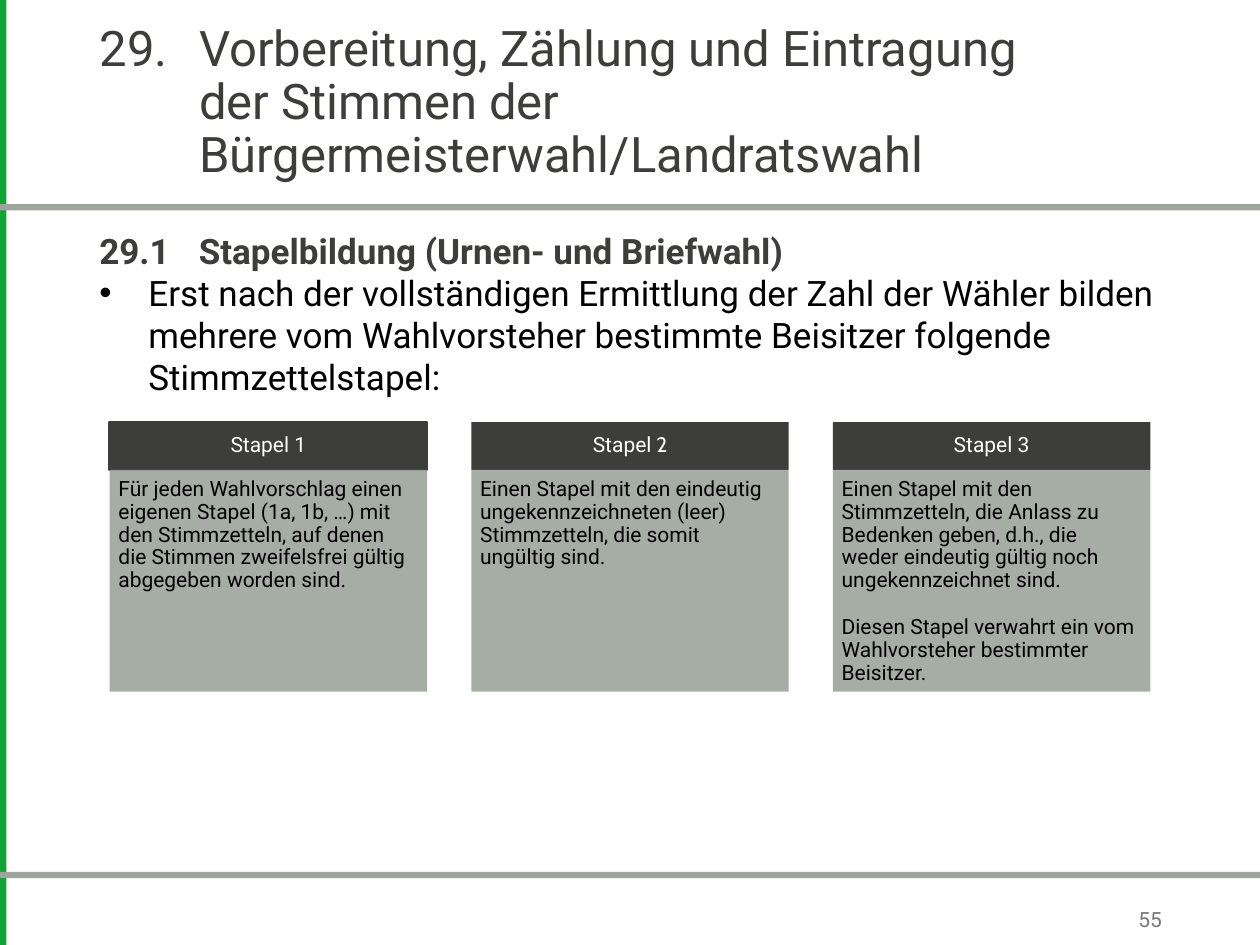
from dataclasses import dataclass

from lxml import etree
from pptx import Presentation
from pptx.dml.color import RGBColor
from pptx.enum.shapes import MSO_SHAPE
from pptx.enum.text import MSO_ANCHOR, MSO_AUTO_SIZE, PP_ALIGN
from pptx.oxml.ns import qn
from pptx.util import Inches, Pt

RECTANGLE = MSO_SHAPE.RECTANGLE
TOP, MIDDLE = MSO_ANCHOR.TOP, MSO_ANCHOR.MIDDLE
LEFT, CENTER, RIGHT = PP_ALIGN.LEFT, PP_ALIGN.CENTER, PP_ALIGN.RIGHT
TITLE_ONLY = 5


@dataclass(frozen=True)
class Theme:
    font: str = "Roboto"
    alt_font: str = "Cabin"
    green: str = "14A136"
    sage: str = "9DA59C"
    dark: str = "3D3E3C"
    black: str = "000000"
    white: str = "FFFFFF"
    grey: str = "797979"
    title_size: int = 28
    body_size: int = 20
    small_size: int = 12


THEME = Theme()

TITLE = "29. \tVorbereitung, Zählung und Eintragung der Stimmen der Bürgermeisterwahl/Landratswahl"
HEADING = "29.1 \tStapelbildung (Urnen- und Briefwahl)"
INTRO = ("Erst nach der vollständigen Ermittlung der Zahl der Wähler bilden mehrere vom "
         "Wahlvorsteher bestimmte Beisitzer folgende Stimmzettelstapel:")
# Each stack: header runs with their fonts, body paragraphs, header outline width
STACKS = [
    ([("Stapel 1", THEME.font)],
     ["Für jeden Wahlvorschlag einen eigenen Stapel (1a, 1b, …) mit den Stimmzetteln, "
      "auf denen die Stimmen zweifelsfrei gültig abgegeben worden sind."], 1.5),
    ([("Stapel", THEME.font), (" 2", THEME.alt_font)],
     ["Einen Stapel mit den eindeutig ungekennzeichneten (leer) Stimmzetteln, "
      "die somit ungültig sind."], 0),
    ([("Stapel 3", THEME.font)],
     ["Einen Stapel mit den Stimmzetteln, die Anlass zu Bedenken geben, d.h., die weder "
      "eindeutig gültig noch ungekennzeichnet sind.",
      "Diesen Stapel verwahrt ein vom Wahlvorsteher bestimmter Beisitzer."], 0),
]


def apply(target, values):
    for name, value in values.items():
        setattr(target, name, value)


def lengths(box):
    return [Inches(value) for value in box]


def add_bar(page, box, color, alpha=None, outline=0):
    bar = page.shapes.add_shape(RECTANGLE, *lengths(box))
    bar.shadow.inherit = False
    bar.fill.solid()
    bar.fill.fore_color.rgb = RGBColor.from_string(color)
    if alpha:
        fill_color = bar.fill._xPr.find(qn("a:solidFill"))[0]
        etree.SubElement(fill_color, qn("a:alpha")).set("val", str(alpha * 1000))
    if outline:
        bar.line.color.rgb = RGBColor.from_string(color)
        bar.line.width = Pt(outline)
    else:
        bar.line.fill.background()
    return bar


def set_frame(frame, anchor, insets=(0.1, 0.05, 0.1, 0.05)):
    sides = ("margin_left", "margin_top", "margin_right", "margin_bottom")
    apply(frame, dict(zip(sides, lengths(insets))))
    apply(frame, {"word_wrap": True, "auto_size": MSO_AUTO_SIZE.NONE,
                  "vertical_anchor": anchor})


def write(para, spans, size, color, bold=False, hanging=0, bullet=None, **layout):
    """Fill a paragraph with (text, font) spans; hanging is the indent in inches."""
    properties = para._p.get_or_add_pPr()
    if hanging:
        properties.set("marL", str(Inches(hanging)))
        properties.set("indent", str(-Inches(hanging)))
    if bullet:
        etree.SubElement(properties, qn("a:buFont")).set("typeface", "Arial")
        etree.SubElement(properties, qn("a:buChar")).set("char", bullet)
    apply(para, {"alignment": LEFT, **layout})
    for text, font in spans:
        span = para.add_run()
        span.text = text
        apply(span.font, {"name": font, "size": Pt(size), "bold": bold})
        span.font.color.rgb = RGBColor.from_string(color)


def add_frame_lines(page):
    add_bar(page, (0, 0, 0.05, 7.5), THEME.green)
    for top in (1.62, 6.92):
        add_bar(page, (0, top, 10, 0.05), THEME.sage)


def place_title(page, box):
    title = page.shapes.title
    apply(title, dict(zip(("left", "top", "width", "height"), lengths(box))))
    set_frame(title.text_frame, MIDDLE)
    write(title.text_frame.paragraphs[0], [(TITLE, THEME.font)], THEME.title_size,
          THEME.dark, hanging=0.79, line_spacing=0.9)


def add_intro(page, box):
    frame = page.shapes.add_textbox(*lengths(box)).text_frame
    set_frame(frame, TOP)
    write(frame.paragraphs[0], [(HEADING, THEME.font)], THEME.body_size, THEME.dark,
          bold=True, hanging=0.79)
    write(frame.add_paragraph(), [(INTRO, THEME.font)], THEME.body_size, THEME.black,
          hanging=0.39, bullet="•")


def add_stack(page, box, header, body, outline):
    left, top, width, height = box
    header_height = 0.38
    head = add_bar(page, (left, top, width, header_height), THEME.dark, outline=outline)
    set_frame(head.text_frame, MIDDLE, (0.09, 0.05, 0.09, 0.05))
    write(head.text_frame.paragraphs[0], header, THEME.small_size, THEME.white,
          alignment=CENTER, line_spacing=0.9)

    panel_box = (left, top + header_height, width, height - header_height)
    frame = add_bar(page, panel_box, THEME.sage, alpha=90).text_frame
    set_frame(frame, TOP, (0.07, 0.07, 0.09, 0.1))
    for index, text in enumerate(body):
        para = frame.add_paragraph() if index else frame.paragraphs[0]
        write(para, [(text, THEME.font)], THEME.small_size, THEME.black,
              line_spacing=0.9, space_before=Pt(14 if index else 0))


def add_stacks(page, box):
    left, top, width, height = box
    stack_width = 2.52
    step = (width - stack_width) / (len(STACKS) - 1)
    for index, stack in enumerate(STACKS):
        add_stack(page, (left + index * step, top, stack_width, height), *stack)


def add_page_number(page, box):
    frame = page.shapes.add_textbox(*lengths(box)).text_frame
    set_frame(frame, MIDDLE)
    write(frame.paragraphs[0], [("55", THEME.font)], THEME.small_size, THEME.grey,
          alignment=RIGHT)


def main():
    deck = Presentation()
    deck.slide_width, deck.slide_height = Inches(10), Inches(7.5)
    page = deck.slides.add_slide(deck.slide_layouts[TITLE_ONLY])
    add_frame_lines(page)
    place_title(page, (0.69, 0.08, 7.48, 1.48))
    add_intro(page, (0.69, 1.77, 8.63, 1.5))
    add_stacks(page, (0.87, 3.35, 8.26, 2.14))
    add_page_number(page, (8.42, 7.17, 0.9, 0.25))
    deck.save("out.pptx")


if __name__ == "__main__":
    main()
